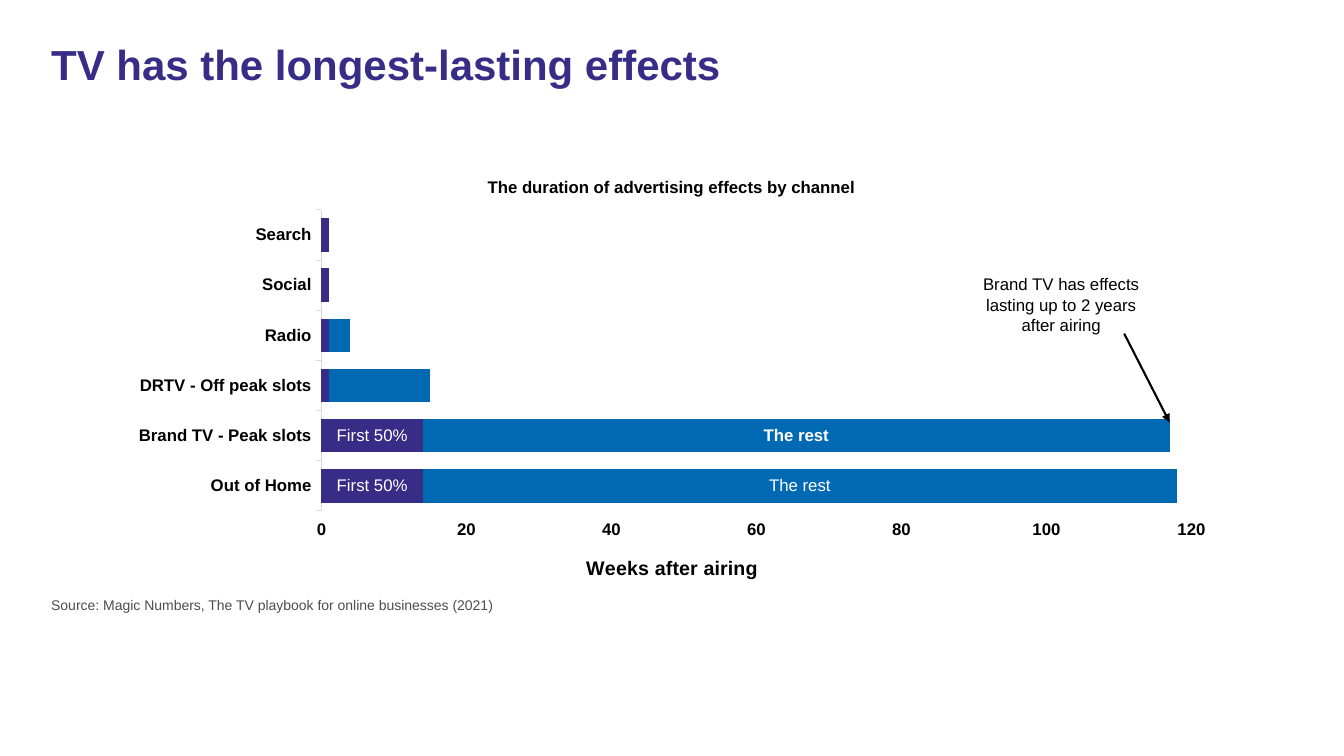
from lxml.etree import SubElement
from pptx import Presentation
from pptx.chart.data import CategoryChartData
from pptx.dml.color import RGBColor
from pptx.enum.chart import XL_CHART_TYPE, XL_TICK_MARK
from pptx.enum.shapes import MSO_CONNECTOR
from pptx.enum.text import PP_ALIGN
from pptx.oxml import parse_xml
from pptx.oxml.ns import nsdecls, qn
from pptx.util import Inches, Pt

PURPLE, BLUE, BLACK, WHITE = "372D87", "0069B4", "000000", "FFFFFF"
GREY, PALE_GREY = "4D4D4D", "D9D9D9"


def color(hex_code):
    return RGBColor.from_string(hex_code)


class SlideBuilder:
    """Holds the slide and its font, and adds each kind of element."""

    def __init__(self, slide, font="Arial"):
        self.slide = slide
        self.font = font

    def style(self, font, size, hex_code, bold=False):
        font.name = self.font
        font.size = Pt(size)
        font.bold = bold
        font.color.rgb = color(hex_code)

    def fill_frame(self, frame, wording, size, hex_code, bold=False):
        frame.text = wording
        paragraph = frame.paragraphs[0]
        self.style(paragraph.runs[0].font, size, hex_code, bold)
        return paragraph

    def text(self, box, wording, size, hex_code, bold=False):
        frame = self.slide.shapes.add_textbox(*map(Inches, box)).text_frame
        frame.word_wrap = True
        return self.fill_frame(frame, wording, size, hex_code, bold)

    def arrow(self, start, end, hex_code, width):
        connector = self.slide.shapes.add_connector(
            MSO_CONNECTOR.STRAIGHT, *map(Inches, start + end))
        connector.line.color.rgb = color(hex_code)
        connector.line.width = Pt(width)
        properties = connector._element.spPr
        SubElement(properties.find(qn("a:ln")), qn("a:tailEnd"), type="triangle")
        SubElement(properties, qn("a:effectLst"))

    def place(self, parent, index, target="", **fractions):
        for old in parent.findall(qn("c:layout")):
            parent.remove(old)
        entries = target + '<c:xMode val="edge"/><c:yMode val="edge"/>' + "".join(
            f'<c:{key} val="{value}"/>' for key, value in fractions.items())
        parent.insert(index, parse_xml(
            f'<c:layout {nsdecls("c")}><c:manualLayout>{entries}'
            '</c:manualLayout></c:layout>'))

    def stacked_bars(self, box, title, axis_title, categories, series, maximum):
        data = CategoryChartData()
        data.categories = categories
        for name, values, *_ in series:
            data.add_series(name, values)
        chart = self.slide.shapes.add_chart(
            XL_CHART_TYPE.BAR_STACKED, *map(Inches, box), data).chart
        self.style(chart.font, 10, BLACK)
        chart.has_legend = False
        chart.has_title = True
        self.fill_frame(chart.chart_title.text_frame, title, 12, BLACK, True)

        plot = chart.plots[0]
        plot.gap_width = 50
        plot.overlap = 100
        plot.vary_by_categories = False
        for bars, (_, _, fill, labels) in zip(plot.series, series):
            bars.format.fill.solid()
            bars.format.fill.fore_color.rgb = color(fill)
            for index, (wording, bold) in enumerate(labels):
                label = bars.points[index].data_label
                self.fill_frame(label.text_frame, wording, 12, WHITE, bold)
            bars.data_labels.show_value = False

        channels, weeks = chart.category_axis, chart.value_axis
        for axis in (channels, weeks):
            axis.has_major_gridlines = False
            self.style(axis.tick_labels.font, 12, BLACK, True)
            axis.major_tick_mark = XL_TICK_MARK.OUTSIDE
        channels.format.line.color.rgb = color(PALE_GREY)
        channels.format.line.width = Pt(0.75)
        weeks.format.line.fill.background()
        weeks.minimum_scale, weeks.maximum_scale = 0, maximum
        weeks.major_unit = 20
        self.fill_frame(weeks.axis_title.text_frame, axis_title, 14, BLACK, True)
        self.place(weeks.axis_title._element, 1, x=0.42, y=0.9)
        self.place(chart._chartSpace.chart.plotArea, 0,
                   '<c:layoutTarget val="inner"/>', x=0.185, y=0.116, w=0.783, h=0.69)


def main():
    deck = Presentation()
    deck.slide_width, deck.slide_height = Inches(13.33), Inches(7.5)
    builder = SlideBuilder(deck.slides.add_slide(deck.slide_layouts[6]))

    builder.stacked_bars(
        (1.15, 1.58, 11.02, 4.33),
        "The duration of advertising effects by channel", "Weeks after airing",
        ["Out of Home", "Brand TV - Peak slots", "DRTV - Off peak slots",
         "Radio", "Social", "Search"],
        [("Series 1", (14, 14, 1, 1, 1, 1), PURPLE,
          [("First 50%", False), ("First 50%", False)]),
         ("The rest", (104, 103, 14, 3, 0, 0), BLUE,
          [("The rest", False), ("The rest", True)])],
        maximum=120)

    heading = builder.text((0.41, 0.39, 12.4, 1.12),
                           "TV has the longest-lasting effects", 30, PURPLE, True)
    heading.line_spacing = 0.9
    builder.text((0.41, 5.87, 12.4, 0.33),
                 "Source: Magic Numbers, The TV playbook for online businesses (2021)",
                 10, GREY)
    callout = builder.text((9.53, 2.67, 1.99, 0.71),
                           "Brand TV has effects lasting up to 2 years after airing",
                           12, BLACK)
    callout.alignment = PP_ALIGN.CENTER
    builder.arrow((11.15, 3.31), (11.6, 4.19), BLACK, 1.5)

    deck.save("out.pptx")


if __name__ == "__main__":
    main()
